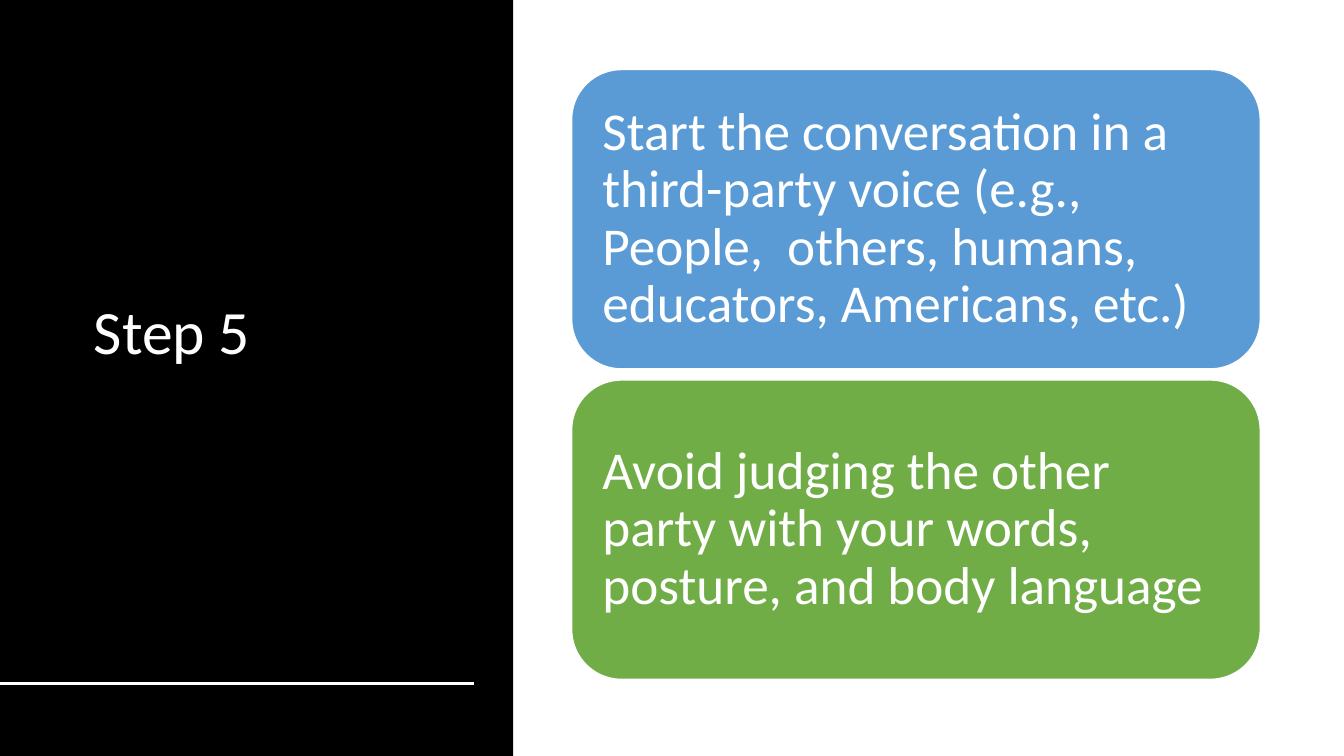
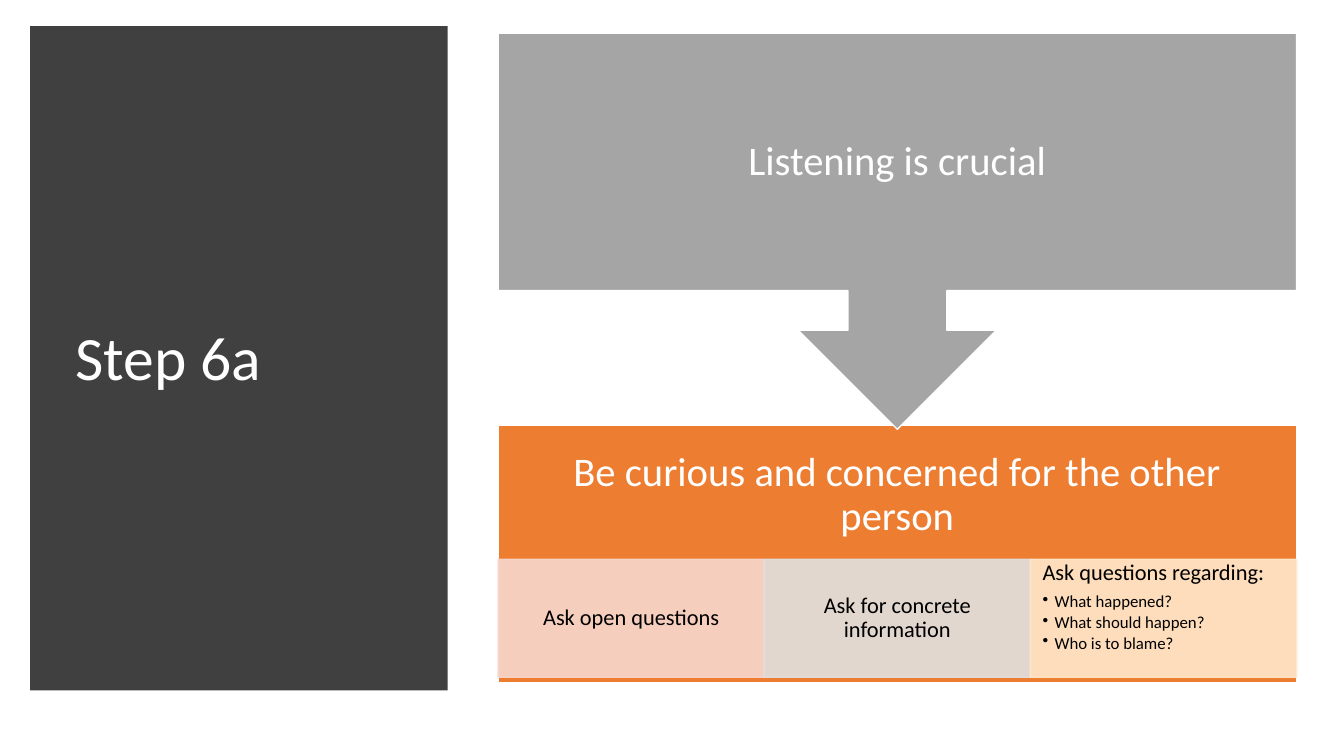
from lxml.etree import SubElement
from pptx import Presentation
from pptx.dml.color import RGBColor
from pptx.enum.shapes import MSO_CONNECTOR, MSO_SHAPE
from pptx.enum.text import MSO_ANCHOR, MSO_AUTO_SIZE, PP_ALIGN
from pptx.oxml.ns import qn
from pptx.util import Inches, Pt

# Content
ADVICE = [
    ("Start the conversation in a third-party voice (e.g., People,  others, "
     "humans, educators, Americans, etc.)", "5B9BD5"),
    ("Avoid judging the other party with your words, posture, and body language",
     "70AD47"),
]
LISTENING = "Listening is crucial"
CURIOSITY = "Be curious and concerned for the other person"
QUESTIONS = [
    ("Ask open questions", [], "F8D7CE"),
    ("Ask for concrete information", [], "E1E1E1"),
    ("Ask questions regarding:",
     ["What happened?", "What should happen?", "Who is to blame?"], "FFE8CC"),
]

# Shared style
FONT = "Calibri"
WHITE, BLACK, CHARCOAL = "FFFFFF", "000000", "404040"
GREY, ORANGE = "A5A5A5", "ED7D31"
TITLE_SIZE, ADVICE_SIZE, STAGE_SIZE, CELL_SIZE, BULLET_SIZE = 44, 38, 29, 16, 12
BULLET_INDENT = 0.12


def color(value):
    return RGBColor.from_string(value)


def write(paragraph, text, size, ink=WHITE, align=PP_ALIGN.LEFT, after=0, bullet=False):
    if bullet:
        props = paragraph._p.get_or_add_pPr()
        props.set("marL", str(Inches(BULLET_INDENT)))
        props.set("indent", str(-Inches(BULLET_INDENT)))
        SubElement(props, qn("a:buChar")).set("char", "•")
    paragraph.alignment = align
    paragraph.line_spacing = 0.9
    paragraph.space_after = Pt(after)
    run = paragraph.add_run()
    run.text = text
    run.font.name, run.font.size = FONT, Pt(size)
    run.font.color.rgb = color(ink)


def set_frame(frame, insets, anchor=MSO_ANCHOR.MIDDLE):
    frame.word_wrap = True
    frame.auto_size = MSO_AUTO_SIZE.NONE
    frame.vertical_anchor = anchor
    (frame.margin_left, frame.margin_top,
     frame.margin_right, frame.margin_bottom) = map(Inches, insets)


def add_block(slide, preset, box, fill, outline=None, opacity=None):
    block = slide.shapes.add_shape(preset, *map(Inches, box))
    block.shadow.inherit = False
    block.fill.solid()
    block.fill.fore_color.rgb = color(fill)
    if outline:
        block.line.color.rgb = color(outline)
        block.line.width = Pt(1)
    else:
        block.line.fill.background()
    if opacity:
        for tint in block._element.spPr.iter(qn("a:srgbClr")):
            SubElement(tint, qn("a:alpha")).set("val", str(opacity * 1000))
    return block


def add_step(deck, title, title_box, panel_box, panel_fill):
    """Title-only slide with a dark panel behind the title."""
    slide = deck.slides.add_slide(deck.slide_layouts[5])
    panel = add_block(slide, MSO_SHAPE.RECTANGLE, panel_box, panel_fill)
    heading = slide.shapes.title
    heading._element.addprevious(panel._element)
    heading.left, heading.top, heading.width, heading.height = map(Inches, title_box)
    set_frame(heading.text_frame, (0.1, 0.05, 0.1, 0.05))
    write(heading.text_frame.paragraphs[0], title, TITLE_SIZE)
    return slide


def build_step_5(deck):
    slide = add_step(deck, "Step 5", (0.83, 0.61, 3.9, 5.42), (0, 0, 5.09, 7.5), BLACK)

    # Rule at the foot of the panel
    rule = slide.shapes.add_connector(
        MSO_CONNECTOR.STRAIGHT, 0, Inches(6.78), Inches(4.7), Inches(6.78))
    rule.line.color.rgb = color(WHITE)
    rule.line.width = Pt(2)
    SubElement(rule._element.spPr, qn("a:effectLst"))

    # Stacked advice cards
    left, top, width, height, gap = 5.67, 0.69, 6.83, 2.97, 0.11
    for row, (text, fill) in enumerate(ADVICE):
        card = add_block(slide, MSO_SHAPE.ROUNDED_RECTANGLE,
                         (left, top + row * (height + gap), width, height), fill, WHITE)
        set_frame(card.text_frame, [0.16] * 4)
        write(card.text_frame.paragraphs[0], text, ADVICE_SIZE)


def build_step_6a(deck):
    slide = add_step(deck, "Step 6a", (0.65, 0.7, 3.46, 5.75), (0.3, 0.26, 4.14, 6.59),
                     CHARCOAL)
    left, width, inset = 4.94, 7.92, 0.23
    stage_top, stage_height, header_height = 4.22, 2.55, 1.38

    # Lower stage, its text kept in the header part
    stage = add_block(slide, MSO_SHAPE.RECTANGLE,
                      (left, stage_top, width, stage_height), ORANGE, WHITE)
    set_frame(stage.text_frame,
              (inset, inset, inset, inset + stage_height - header_height))
    write(stage.text_frame.paragraphs[0], CURIOSITY, STAGE_SIZE, align=PP_ALIGN.CENTER)

    # Row of question cells
    cell_width = width / len(QUESTIONS)
    for column, (text, bullets, fill) in enumerate(QUESTIONS):
        cell = add_block(slide, MSO_SHAPE.RECTANGLE,
                         (left + column * cell_width, 5.55, cell_width, 1.17),
                         fill, fill, opacity=90)
        frame = cell.text_frame
        set_frame(frame, (0.12, 0.02, 0.12, 0.02),
                  MSO_ANCHOR.TOP if bullets else MSO_ANCHOR.MIDDLE)
        write(frame.paragraphs[0], text, CELL_SIZE, ink=BLACK,
              align=PP_ALIGN.LEFT if bullets else PP_ALIGN.CENTER,
              after=0.35 * CELL_SIZE if bullets else 0)
        for item in bullets:
            write(frame.add_paragraph(), item, BULLET_SIZE, ink=BLACK,
                  after=0.15 * BULLET_SIZE, bullet=True)

    # Upper stage pointing down
    callout = add_block(slide, MSO_SHAPE.DOWN_ARROW_CALLOUT,
                        (left, 0.33, width, 3.93), GREY, WHITE)
    set_frame(callout.text_frame, [inset] * 4)
    write(callout.text_frame.paragraphs[0], LISTENING, STAGE_SIZE, align=PP_ALIGN.CENTER)


def main():
    deck = Presentation()
    deck.slide_width, deck.slide_height = Inches(13.33), Inches(7.5)
    build_step_5(deck)
    build_step_6a(deck)
    deck.save("out.pptx")


if __name__ == "__main__":
    main()
